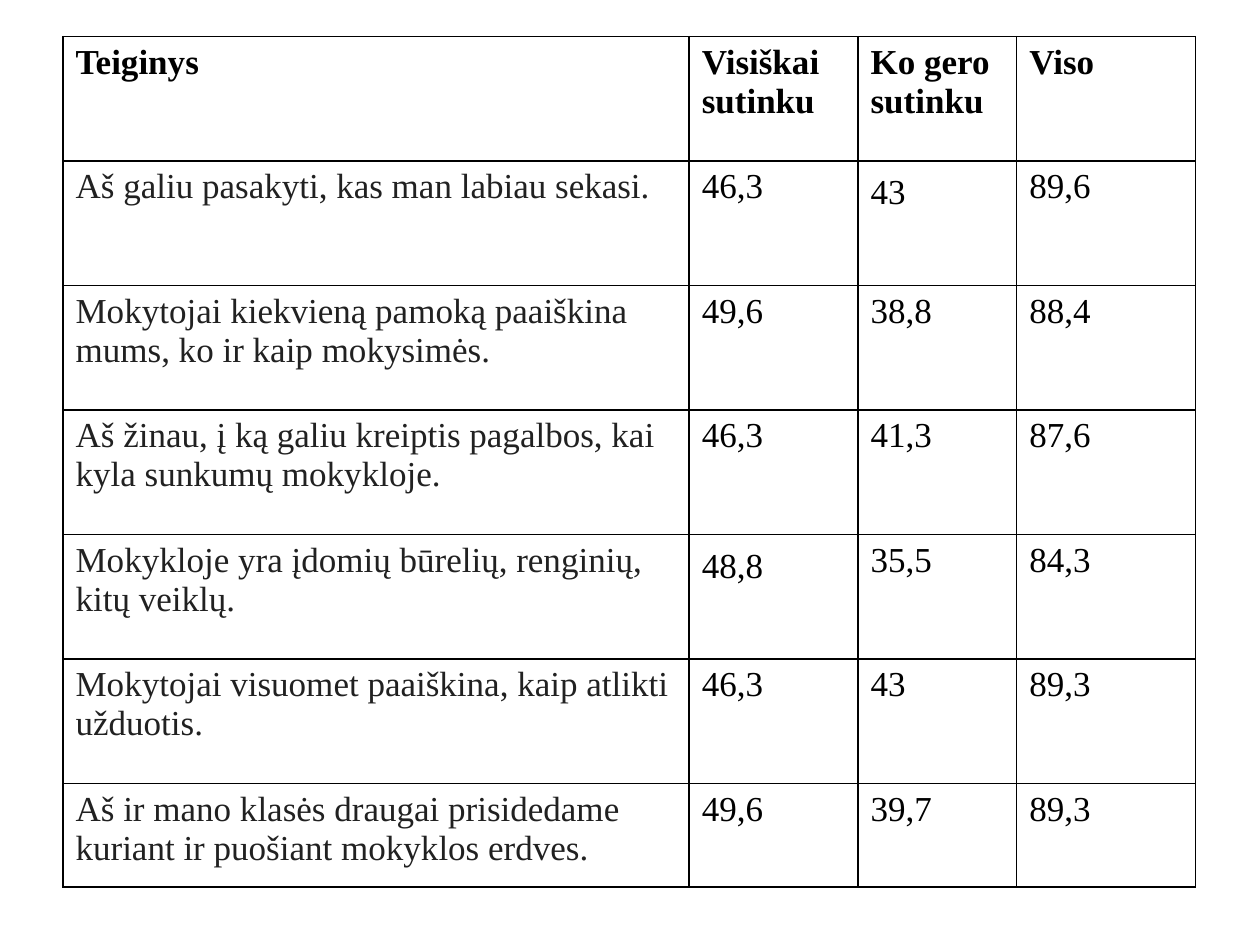
from dataclasses import dataclass
from lxml import etree
from pptx import Presentation
from pptx.dml.color import RGBColor
from pptx.oxml.ns import qn
from pptx.util import Inches, Pt


@dataclass(frozen=True)
class Theme:
    font: str = "Times New Roman"
    size: int = 20
    ink: str = "000000"
    soft: str = "212121"
    line: float = 1


THEME = Theme()
SIDES = ("a:lnL", "a:lnR", "a:lnT", "a:lnB")
WIDTHS = (4.97, 1.34, 1.26, 1.42)
HEIGHTS = (0.99,) * 6 + (0.82,)
LOOSE = {(1, 2), (4, 1)}
ROWS = (
    ("Teiginys", "Visiškai sutinku", "Ko gero sutinku", "Viso"),
    ("Aš galiu pasakyti, kas man labiau sekasi.", "46,3", "43", "89,6"),
    ("Mokytojai kiekvieną pamoką paaiškina mums, ko ir kaip mokysimės.",
     "49,6", "38,8", "88,4"),
    ("Aš žinau, į ką galiu kreiptis pagalbos, kai kyla sunkumų mokykloje.",
     "46,3", "41,3", "87,6"),
    ("Mokykloje yra įdomių būrelių, renginių, kitų veiklų.",
     "48,8", "35,5", "84,3"),
    ("Mokytojai visuomet paaiškina, kaip atlikti užduotis.",
     "46,3", "43", "89,3"),
    ("Aš ir mano klasės draugai prisidedame kuriant ir puošiant mokyklos erdves.",
     "49,6", "39,7", "89,3"),
)


def apply(item, values):
    for name, value in values.items():
        setattr(item, name, value)


def frame(cell):
    props = cell._tc.get_or_add_tcPr()
    for side in SIDES:
        line = etree.SubElement(props, qn(side), w=str(Pt(THEME.line)))
        fill = etree.SubElement(line, qn("a:solidFill"))
        etree.SubElement(fill, qn("a:srgbClr"), val=THEME.ink)
    cell.fill.background()


def write(cell, text, head, color, loose):
    para = cell.text_frame.paragraphs[0]
    if loose:
        apply(para, {"line_spacing": 1.15, "space_after": Pt(10)})
    run = para.add_run()
    run.text = text
    apply(run.font, {"name": THEME.font, "size": Pt(THEME.size), "bold": head})
    run.font.color.rgb = RGBColor.from_string(color)


def add_grid(slide, left, top, width, height):
    table = slide.shapes.add_table(
        len(ROWS), len(WIDTHS), Inches(left), Inches(top),
        Inches(width), Inches(height)).table
    apply(table, {"first_row": False, "horz_banding": False})
    for col, share in zip(table.columns, WIDTHS):
        col.width = Inches(width * share / sum(WIDTHS))
    for row, share in zip(table.rows, HEIGHTS):
        row.height = Inches(height * share / sum(HEIGHTS))
    for y, texts in enumerate(ROWS):
        for x, text in enumerate(texts):
            cell = table.cell(y, x)
            color = THEME.soft if y and not x else THEME.ink
            frame(cell)
            write(cell, text, y == 0, color, (y, x) in LOOSE)


def main():
    deck = Presentation()
    apply(deck, {"slide_width": Inches(10), "slide_height": Inches(7.5)})
    slide = deck.slides.add_slide(deck.slide_layouts[6])
    add_grid(slide, 0.5, 0.29, 8.99, 6.75)
    deck.save("out.pptx")


if __name__ == "__main__":
    main()
